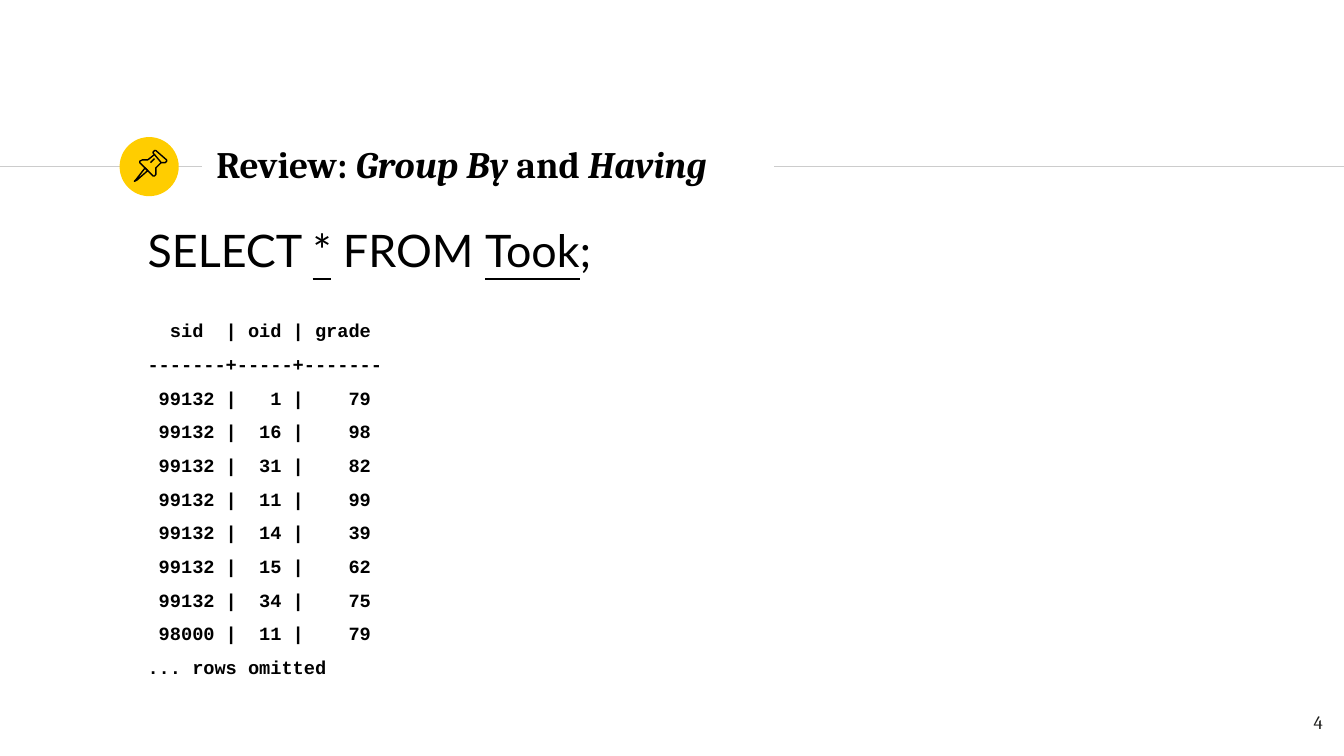
"""Build the review slide on Group By and Having."""
import lxml.etree
import pptx
import pptx.dml.color
import pptx.enum.shapes
import pptx.enum.text
import pptx.oxml.ns
import pptx.util

Inches = pptx.util.Inches
Pt = pptx.util.Pt

TITLE = {"name": "Cambria", "size": Pt(20), "bold": True}
QUERY = {"name": "Lato", "size": Pt(24)}
RESULT = {"name": "Courier New", "size": Pt(10), "bold": True}
NUMBER = {"name": "Cambria", "size": Pt(10)}

TOOK = [
    (99132, 1, 79), (99132, 16, 98), (99132, 31, 82), (99132, 11, 99),
    (99132, 14, 39), (99132, 15, 62), (99132, 34, 75), (98000, 11, 79),
]

PIN_NEEDLE = [(1.08, 1.25), (1.01, 1.34), (1, 1.35), (1.02, 1.34), (1.1, 1.27)]
PIN_HEAD = [
    (1.15, 1.15), (1.2, 1.21), (1.21, 1.21), (1.23, 1.21), (1.24, 1.2),
    (1.24, 1.19), (1.16, 1.12), (1.15, 1.12), (1.14, 1.13), (1.14, 1.14),
]
PIN_BODY = [
    (1.15, 1.15), (1.1, 1.19), (1.08, 1.19), (1.06, 1.19), (1.04, 1.2),
    (1.04, 1.21), (1.14, 1.31), (1.15, 1.31), (1.16, 1.3), (1.16, 1.28),
    (1.16, 1.25), (1.2, 1.21),
]
PIN_SHINE = [(1.12, 1.21), (1.15, 1.18)]


def color(hex_value):
    """Return the colour for a hex string."""
    return pptx.dml.color.RGBColor.from_string(hex_value)


def add_rule(slide, left, right):
    """Draw a thin grey horizontal line at the height of the title."""
    rule = slide.shapes.add_connector(
        pptx.enum.shapes.MSO_CONNECTOR.STRAIGHT,
        Inches(left), Inches(1.24), Inches(right), Inches(1.24))
    rule.line.color.rgb = color("CCCCCC")
    rule.line.width = Pt(0.75)
    lxml.etree.SubElement(rule._element.spPr, pptx.oxml.ns.qn("a:effectLst"))


def add_badge(slide):
    """Draw the yellow disc behind the pin."""
    badge = slide.shapes.add_shape(
        pptx.enum.shapes.MSO_SHAPE.OVAL,
        Inches(0.89), Inches(1.02), Inches(0.44), Inches(0.44))
    badge.shadow.inherit = False
    badge.fill.solid()
    badge.fill.fore_color.rgb = color("FFCD00")
    badge.line.fill.background()


def add_outline(slide, points, close):
    """Draw one unfilled black outline through the points."""
    corners = [(Inches(x), Inches(y)) for x, y in points]
    builder = slide.shapes.build_freeform(*corners[0])
    builder.add_line_segments(corners[1:], close=close)
    outline = builder.convert_to_shape()
    outline.shadow.inherit = False
    outline.fill.background()
    outline.line.color.rgb = color("000000")
    outline.line.width = Pt(0.75)


def format_frame(frame, anchor):
    """Give a text frame its margins, wrapping and anchor."""
    margins = {f"margin_{side}": Inches(0.1)
               for side in ("left", "top", "right", "bottom")}
    settings = {
        **margins, "word_wrap": True, "vertical_anchor": anchor,
        "auto_size": pptx.enum.text.MSO_AUTO_SIZE.NONE,
    }
    for name, value in settings.items():
        setattr(frame, name, value)


def add_text(slide, left, top, width, height):
    """Add a text box and return its frame."""
    box = slide.shapes.add_textbox(
        Inches(left), Inches(top), Inches(width), Inches(height))
    format_frame(box.text_frame, pptx.enum.text.MSO_ANCHOR.TOP)
    return box.text_frame


def write_runs(paragraph, runs, style, hex_value="000000"):
    """Write runs of text, each with its own additions to the style."""
    for text, extra in runs:
        run = paragraph.add_run()
        run.text = text
        run.font.color.rgb = color(hex_value)
        for name, value in {**style, **extra}.items():
            setattr(run.font, name, value)


def write_title(slide):
    """Place and fill the title."""
    title = slide.shapes.title
    place = {"left": 1.51, "top": 0.98, "width": 4.24, "height": 0.48}
    for name, value in place.items():
        setattr(title, name, Inches(value))
    format_frame(title.text_frame, pptx.enum.text.MSO_ANCHOR.MIDDLE)
    heading = title.text_frame.paragraphs[0]
    heading.alignment = pptx.enum.text.PP_ALIGN.LEFT
    italic = {"italic": True}
    write_runs(heading, [("Review: ", {}), ("Group By ", italic),
                         ("and ", {}), ("Having", italic)], TITLE)


def write_query(slide):
    """Write the query and the rows it returns."""
    frame = add_text(slide, 1, 1.56, 8.01, 3.64)
    underline = {"underline": True}
    write_runs(frame.paragraphs[0],
               [("SELECT ", {}), ("*", underline), (" FROM ", {}),
                ("Took", underline), (";", {})], QUERY)
    rows = [f" {sid} | {oid:>3} | {grade:>5}" for sid, oid, grade in TOOK]
    lines = ["  sid  | oid | grade", "-------+-----+-------",
             *rows, "... rows omitted"]
    for index, line in enumerate(lines):
        paragraph = frame.add_paragraph()
        paragraph.space_before = Pt(6 if index else 22.7)
        write_runs(paragraph, [(line, {})], RESULT)


def write_number(slide):
    """Write the slide number in the bottom right corner."""
    number = add_text(slide, 9.34, 5.19, 0.6, 0.43).paragraphs[0]
    number.alignment = pptx.enum.text.PP_ALIGN.RIGHT
    write_runs(number, [("4", {})], NUMBER, "1D1D1B")


def main():
    """Build and save the slide."""
    deck = pptx.Presentation()
    deck.slide_width = Inches(10)
    deck.slide_height = Inches(10 * 9 / 16)
    slide = deck.slides.add_slide(deck.slide_layouts.get_by_name("Title Only"))
    add_rule(slide, 0, 1.5)
    add_badge(slide)
    add_rule(slide, 5.76, 10)
    for points, close in ((PIN_NEEDLE, True), (PIN_HEAD, True),
                          (PIN_BODY, False), (PIN_SHINE, False)):
        add_outline(slide, points, close)
    write_number(slide)
    write_title(slide)
    write_query(slide)
    deck.save("out.pptx")


if __name__ == "__main__":
    main()
